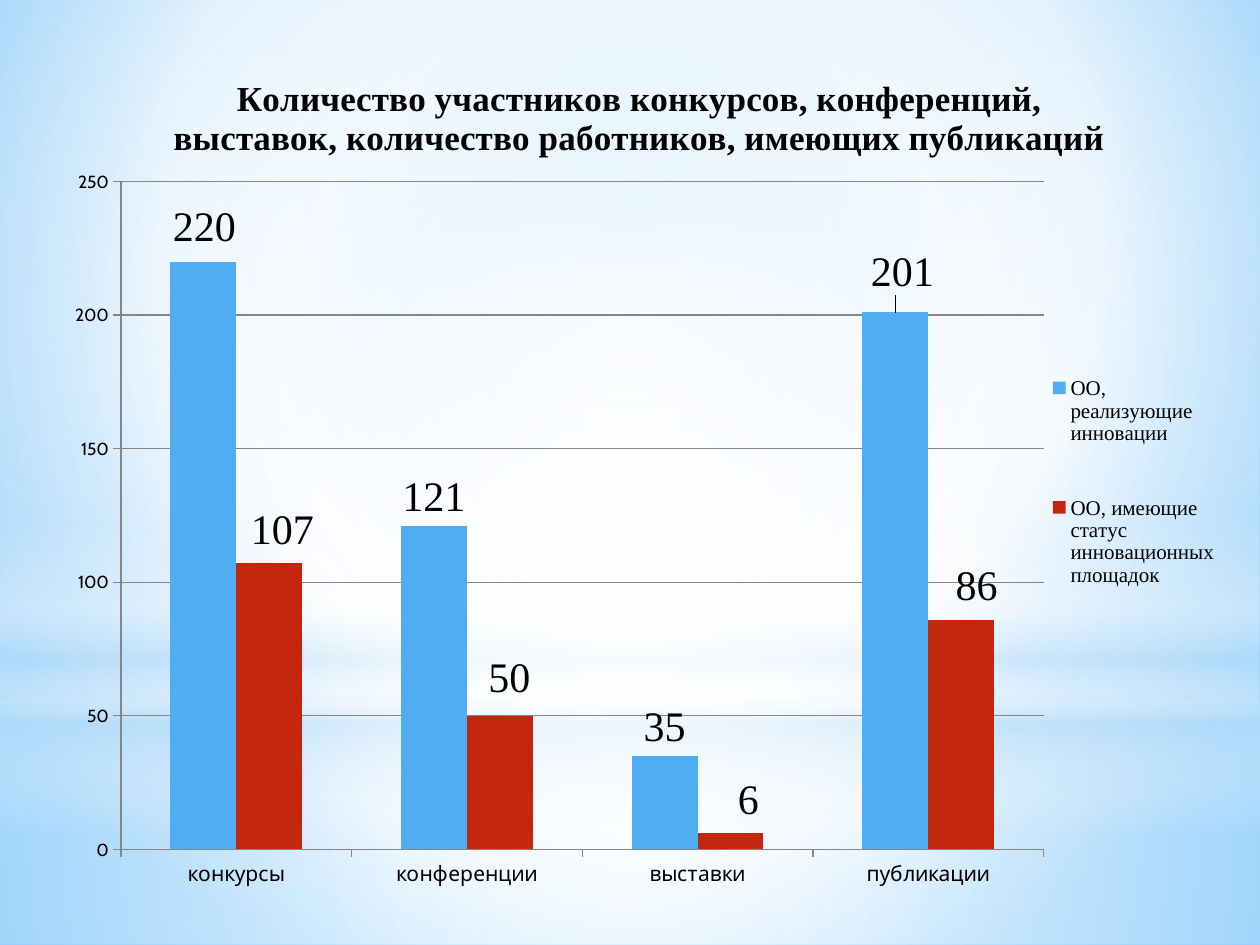
from dataclasses import dataclass

from lxml import etree
from pptx import Presentation
from pptx import util as u
from pptx.chart.data import CategoryChartData
from pptx.dml.color import RGBColor
from pptx.enum import chart as charts
from pptx.enum import shapes
from pptx.oxml.ns import qn


@dataclass(frozen=True)
class Theme:
    text: str = "000000"
    line: str = "868686"
    white: str = "FFFFFF"
    haze: str = "B4DCFA"
    sky: str = "9ED5FF"
    deep_sky: str = "5BB9FF"
    series: tuple = ("4FADF3", "C3260C")
    body_font: str = "Cabin"
    serif_font: str = "Times New Roman"
    axis_size: int = 10
    caption_size: int = 12
    title_size: int = 20
    label_size: int = 24


CATEGORIES = ("конкурсы", "конференции", "выставки", "публикации")
# Each label shift is (right, down) in percent of the chart's size.
SERIES = (
    ("ОО, реализующие инновации", (220, 121, 35, 201),
     {0: (0.1, -0.7), 3: (0.6, -1.4)}),
    ("ОО, имеющие статус инновационных площадок", (107, 50, 6, 86),
     {0: (1.1, -0.6), 1: (0.8, -1.1), 2: (1.5, -0.5), 3: (1.3, -0.6)}),
)
TITLE = ("Количество участников конкурсов, конференций, выставок, "
         "количество работников, имеющих публикаций")
CENTRE = (50, 50, 50, 50)
CHART_2012 = "http://schemas.microsoft.com/office/drawing/2012/chart"
LABEL_EXTENSION = "{CE6537A1-D6FC-4f65-9D91-7224C49458BB}"


def add_child(parent, tag, **attributes):
    child = etree.SubElement(parent, qn(tag))
    for name, value in attributes.items():
        child.set(name, str(value))
    return child


def set_gradient(owner, fill, stops, focus=None):
    """Stops are (percent, colour, opacity); without a focus it runs downwards."""
    fill.gradient()
    gradient = next(owner.iter(qn("a:gradFill")))
    for child in list(gradient):
        gradient.remove(child)
    stop_list = add_child(gradient, "a:gsLst")
    for position, color, opacity in stops:
        stop = add_child(stop_list, "a:gs", pos=position * 1000)
        color_node = add_child(stop, "a:srgbClr", val=color)
        if opacity < 100:
            add_child(color_node, "a:alpha", val=opacity * 1000)
    if focus:
        shade = add_child(gradient, "a:path", path="circle")
        sides = {side: value * 1000 for side, value in zip("ltrb", focus)}
        add_child(shade, "a:fillToRect", **sides)
    else:
        add_child(gradient, "a:lin", ang=90 * 60000, scaled=0)


def make_layout(inner=False, edge=True, **percents):
    """Manual chart layout; x, y, w and h are percent of the chart's size."""
    layout = etree.Element(qn("c:layout"))
    manual = add_child(layout, "c:manualLayout")
    if inner:
        add_child(manual, "c:layoutTarget", val="inner")
    if edge:
        add_child(manual, "c:xMode", val="edge")
        add_child(manual, "c:yMode", val="edge")
    for name, value in percents.items():
        add_child(manual, f"c:{name}", val=value / 100)
    return layout


def hide_leader_lines(labels_node):
    extension = add_child(add_child(labels_node, "c:extLst"), "c:ext",
                          uri=LABEL_EXTENSION)
    switch = etree.SubElement(extension, f"{{{CHART_2012}}}showLeaderLines",
                              nsmap={"c15": CHART_2012})
    switch.set("val", "0")


def set_font(font, size, name, color, bold=False):
    font.size = u.Pt(size)
    font.name = name
    font.bold = bold
    font.color.rgb = RGBColor.from_string(color)


def write_text(frame, content, **font_format):
    run = frame.paragraphs[0].add_run()
    run.text = content
    set_font(run.font, **font_format)


class SlideBuilder:
    def __init__(self, slide, theme):
        self.slide = slide
        self.theme = theme

    def background(self, stops, focus):
        set_gradient(self.slide.element, self.slide.background.fill, stops, focus)

    def glow(self, kind, top, height, stops, focus=None):
        shape = self.slide.shapes.add_shape(
            kind, 0, u.Inches(top), u.Inches(10), u.Inches(height))
        shape.shadow.inherit = False
        shape.line.fill.background()
        set_gradient(shape.element, shape.fill, stops, focus)

    def column_chart(self, left, top, width, height):
        theme = self.theme
        data = CategoryChartData()
        data.categories = CATEGORIES
        for name, values, _ in SERIES:
            data.add_series(name, values)
        chart = self.slide.shapes.add_chart(
            charts.XL_CHART_TYPE.COLUMN_CLUSTERED,
            *map(u.Inches, (left, top, width, height)), data).chart
        set_font(chart.font, theme.axis_size, theme.body_font, theme.text)
        chart.has_title = True
        write_text(chart.chart_title.text_frame, TITLE, size=theme.title_size,
                   name=theme.serif_font, color=theme.text, bold=True)
        chart.chart_title.include_in_layout = False
        self.style_axes(chart)
        self.style_legend(chart)

        plot = chart.plots[0]
        plot.gap_width = 150
        plot.overlap = 0
        plot.vary_by_categories = False
        for series, color, (_, _, shifts) in zip(plot.series, theme.series, SERIES):
            self.style_series(series, color, shifts)

        plot_area = chart.element.chart.plotArea
        for old in plot_area.findall(qn("c:layout")):
            plot_area.remove(old)
        plot_area.insert(0, make_layout(inner=True, x=6.45, y=15.6, w=77.5, h=76.5))

    def style_axes(self, chart):
        theme = self.theme
        gray = RGBColor.from_string(theme.line)
        values, categories = chart.value_axis, chart.category_axis
        values.minimum_scale, values.maximum_scale, values.major_unit = 0, 250, 50
        values.has_major_gridlines = True
        for axis, size in ((values, theme.axis_size), (categories, theme.caption_size)):
            axis.major_tick_mark = charts.XL_TICK_MARK.OUTSIDE
            set_font(axis.tick_labels.font, size, theme.body_font, theme.text)
        for owner in (values, categories, values.major_gridlines):
            owner.format.line.color.rgb = gray
            owner.format.line.width = u.Pt(0.75)

    def style_legend(self, chart):
        theme = self.theme
        chart.has_legend = True
        legend = chart.legend
        legend.position = charts.XL_LEGEND_POSITION.RIGHT
        legend.include_in_layout = False
        set_font(legend.font, theme.caption_size, theme.serif_font, theme.text)
        position = legend._element.find(qn("c:legendPos"))
        for old in legend._element.findall(qn("c:layout")):
            legend._element.remove(old)
        position.addnext(make_layout(x=84, y=32, w=15, h=36))

    def style_series(self, series, color, shifts):
        theme = self.theme
        series.format.fill.solid()
        series.format.fill.fore_color.rgb = RGBColor.from_string(color)
        labels = series.data_labels
        labels.show_value = True
        points = [series.points[index].data_label for index in shifts]
        for label in (labels, *points):
            label.position = charts.XL_LABEL_POSITION.OUTSIDE_END
            set_font(label.font, theme.label_size, theme.serif_font, theme.text)
        for node in labels._element.findall(qn("c:dLbl")):
            number = node.find(qn("c:idx"))
            right, down = shifts[int(number.get("val"))]
            number.addnext(make_layout(edge=False, x=right, y=down))
        hide_leader_lines(labels._element)


def main():
    presentation = Presentation()
    presentation.slide_width, presentation.slide_height = u.Inches(10), u.Inches(7.5)
    theme = Theme()
    builder = SlideBuilder(
        presentation.slides.add_slide(presentation.slide_layouts[6]), theme)
    white, haze = theme.white, theme.haze
    rectangle, oval = shapes.MSO_SHAPE.RECTANGLE, shapes.MSO_SHAPE.OVAL

    builder.background([(0, theme.sky, 100), (60, white, 100),
                        (100, theme.deep_sky, 100)], (20, 10, 20, 60))
    for top, height, inner, middle, percent in ((5.58, 1.92, 91, 76, 37),
                                                (0, 5.58, 89, 62, 48)):
        builder.glow(rectangle, top, height, [(0, white, inner), (percent, white, middle),
                                              (100, haze, 79)], CENTRE)
    builder.glow(rectangle, 4.12, 2.5,
                 [(0, white, 0), (29, white, 30), (45, haze, 40),
                  (55, white, 26), (65, haze, 60), (100, white, 0)])
    builder.glow(oval, 1.75, 5.58, [(0, white, 100), (56, white, 0)], CENTRE)
    builder.column_chart(0.35, 0.36, 9.45, 6.93)
    presentation.save("out.pptx")


if __name__ == "__main__":
    main()
